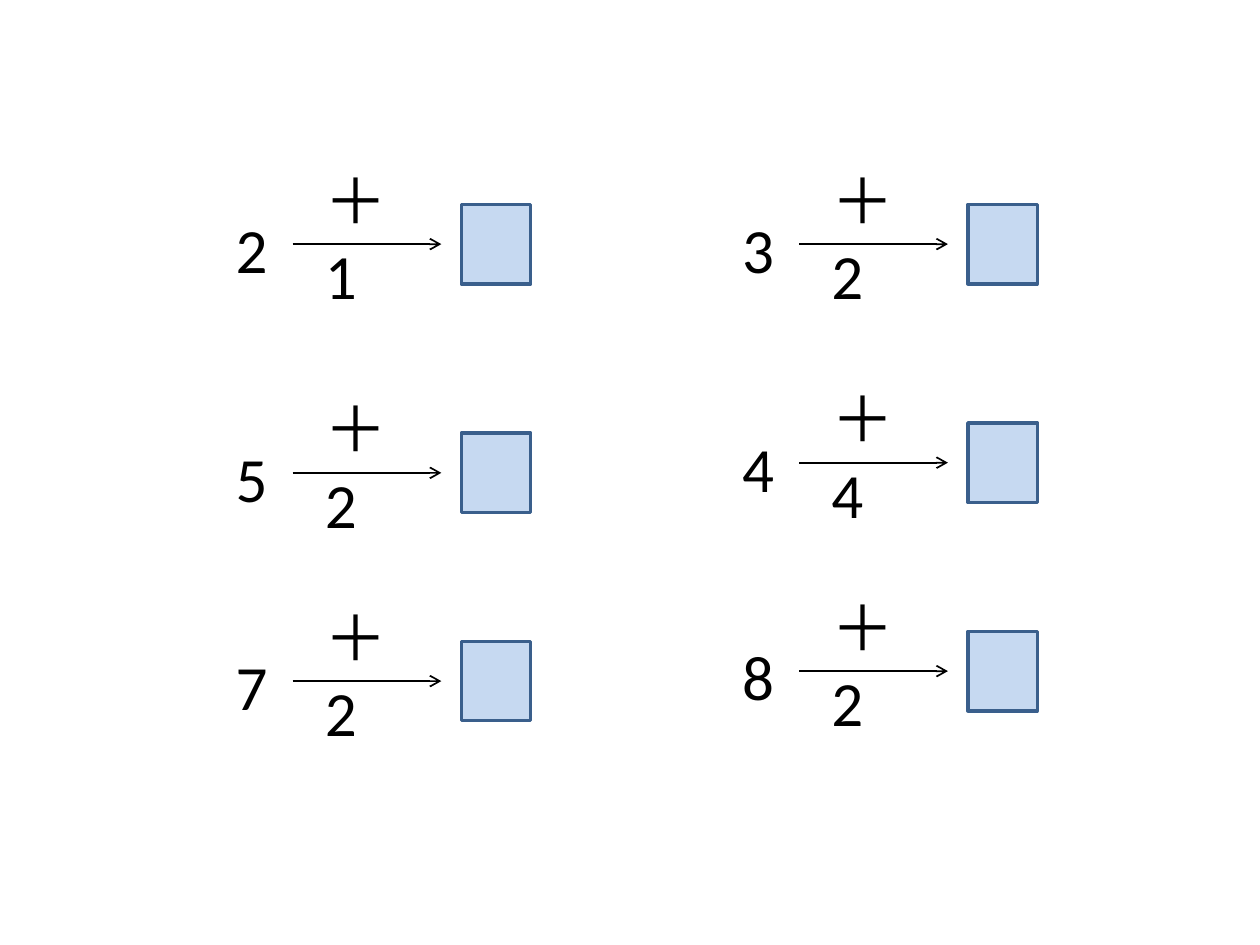
"""Build a slide of six addition exercises with empty answer boxes."""
from lxml import etree
from pptx import Presentation
from pptx.dml.color import RGBColor
from pptx.enum import shapes, text
from pptx.oxml.ns import qn
from pptx.util import Pt

SUMS = [
    (127.5, [(116.8, "2", "1"), (247.5, "5", "2"), (366.5, "7", "2")]),
    (417, [(116.8, "3", "2"), (241.7, "4", "4"), (360.8, "8", "2")]),
]
BOX_W, BOX_H = 39.7, 45.4
BOX_X, SUM_X, SUM_UP = 136.1, 51, 28.3
TAIL_X, HEAD_X = 39.7, 124.7


def tint(code):
    return RGBColor.from_string(code)


def label(group, words, x, y, wide, right=7.2):
    box = group.shapes.add_textbox(Pt(x), Pt(y), Pt(wide), Pt(51))
    frame = box.text_frame
    frame.word_wrap = True
    frame.auto_size = text.MSO_AUTO_SIZE.SHAPE_TO_FIT_TEXT
    frame.margin_right = Pt(right)
    para = frame.paragraphs[0]
    para.text = words
    para.font.name = "Calibri"
    para.font.size = Pt(36)
    para.font.color.rgb = tint("000000")


def answer(group, x, y):
    box = group.shapes.add_shape(
        shapes.MSO_SHAPE.RECTANGLE, Pt(x), Pt(y), Pt(BOX_W), Pt(BOX_H))
    box.shadow.inherit = False
    box.fill.solid()
    box.fill.fore_color.rgb = tint("C6D9F1")
    box.line.color.rgb = tint("3A5F8C")
    box.line.width = Pt(2)


def arrow(group, start, end, y):
    line = group.shapes.add_connector(
        shapes.MSO_CONNECTOR.STRAIGHT, Pt(start), Pt(y), Pt(end), Pt(y))
    line.line.color.rgb = tint("000000")
    line.line.width = Pt(1)
    etree.SubElement(line.line._get_or_add_ln(), qn("a:tailEnd"), type="arrow")
    etree.SubElement(line._element.spPr, qn("a:effectLst"))


def main():
    deck = Presentation()
    deck.slide_width, deck.slide_height = Pt(720), Pt(540)
    slide = deck.slides.add_slide(deck.slide_layouts[6])
    for x, rows in SUMS:
        for y, first, added in rows:
            group = slide.shapes.add_group_shape()
            label(group, first, x, y, 34)
            label(group, "＋" + added, x + SUM_X, y - SUM_UP, 73.5, right=24)
            answer(group, x + BOX_X, y)
            arrow(group, x + TAIL_X, x + HEAD_X, y + BOX_H / 2)
    deck.save("out.pptx")


if __name__ == "__main__":
    main()
